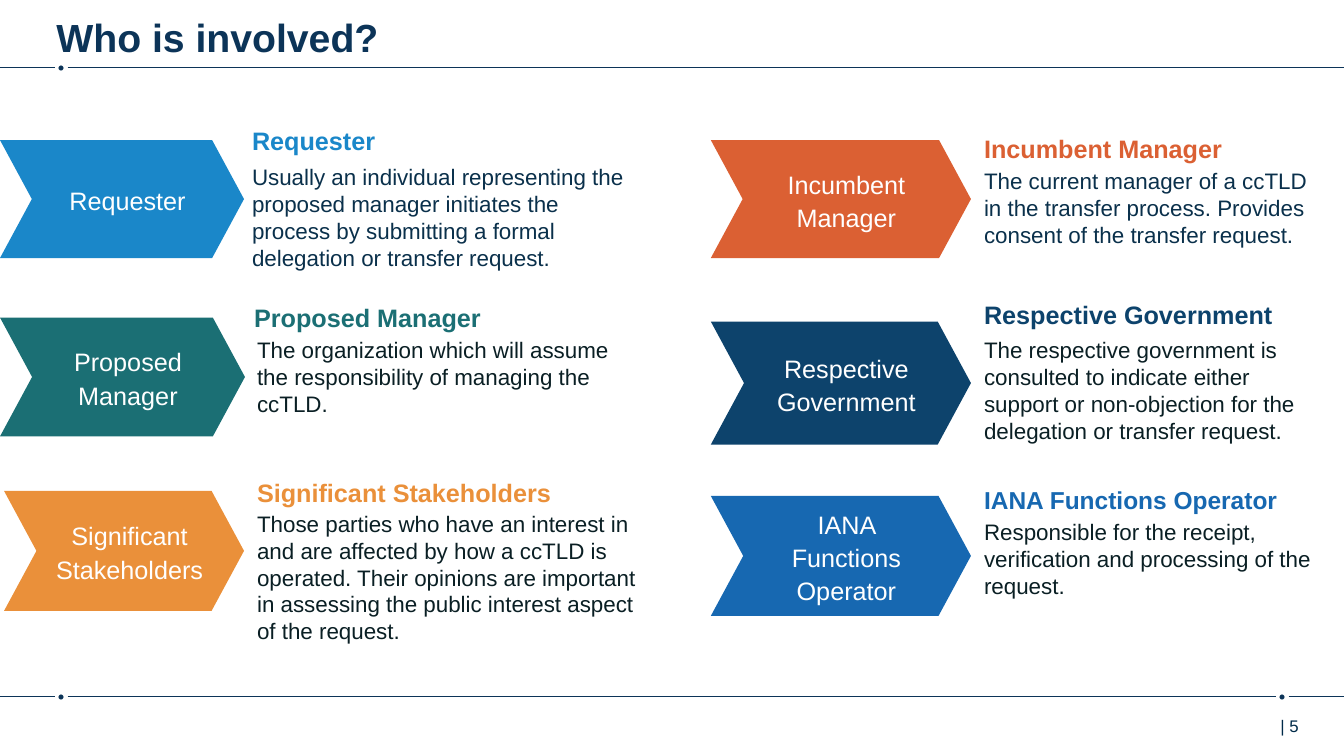
from dataclasses import dataclass

from lxml.etree import SubElement
from pptx import Presentation
from pptx.dml.color import RGBColor
from pptx.enum.shapes import MSO_CONNECTOR, MSO_SHAPE
from pptx.enum.text import MSO_ANCHOR, PP_ALIGN
from pptx.oxml.ns import qn
from pptx.util import Pt

SCALE = 9144  # EMU per px, 100 px to the inch
WIDTH, HEIGHT = 1333, 750


@dataclass(frozen=True)
class Theme:
    font: str = "Arial"
    navy: str = "0C3458"
    white: str = "FFFFFF"
    page_ink: str = "002B49"
    soft_ink: str = "0A304B"
    dark_ink: str = "0A1F24"
    blue: str = "1A87C9"
    teal: str = "1B6F74"
    amber: str = "EA903A"
    orange: str = "DB6033"
    deep_blue: str = "0D436C"
    royal: str = "1768B1"
    title_size: float = 28
    label_size: float = 18
    tight_size: float = 17.5
    body_size: float = 16
    page_size: float = 12
    label_leading: float = 23.8


T = Theme()


@dataclass(frozen=True)
class Role:
    """One party: boxes are (left, top, width, height) in px."""
    name: str
    description: str
    color: str
    ink: str
    chevron: tuple
    heading: tuple
    body: tuple
    heading_size: float = T.label_size


ROLES = [
    Role("Requester",
         "Usually an individual representing the proposed manager initiates the "
         "process by submitting a formal delegation or transfer request.",
         T.blue, T.soft_ink,
         (0, 139, 242, 117), (247, 123, 330, 37), (247, 157, 393, 118)),
    Role("Proposed Manager",
         "The organization which will assume the responsibility of managing the ccTLD.",
         T.teal, T.dark_ink,
         (0, 315, 243, 118), (249, 298, 278, 37), (252, 329, 387, 91)),
    Role("Significant Stakeholders",
         "Those parties who have an interest in and are affected by how a ccTLD is "
         "operated. Their opinions are important in assessing the public interest "
         "aspect of the request.",
         T.amber, T.dark_ink,
         (4, 487, 238, 119), (252, 472, 367, 37), (252, 501, 387, 145)),
    Role("Incumbent Manager",
         "The current manager of a ccTLD in the transfer process. Provides consent "
         "of the transfer request.",
         T.orange, T.soft_ink,
         (705, 139, 258, 117), (973, 131, 249, 37), (973, 161, 342, 91)),
    Role("Respective Government",
         "The respective government is consulted to indicate either support or "
         "non-objection for the delegation or transfer request.",
         T.deep_blue, T.dark_ink,
         (705, 319, 258, 122), (973, 295, 299, 37), (973, 329, 342, 118)),
    Role("IANA Functions Operator",
         "Responsible for the receipt, verification and processing of the request.",
         T.royal, T.dark_ink,
         (705, 492, 258, 119), (973, 479, 299, 37), (973, 509, 342, 91),
         T.tight_size),
]


def px(*lengths):
    return [n * SCALE for n in lengths]


def write(sp, text, size, color, bold=False, margins=(3, 5, 3, 5),
          anchor=MSO_ANCHOR.TOP):
    """Fill a shape with one paragraph and return that paragraph."""
    tf = sp.text_frame
    tf.word_wrap = True
    tf.vertical_anchor = anchor
    tf.margin_left, tf.margin_top, tf.margin_right, tf.margin_bottom = px(*margins)
    tf.text = text
    p = tf.paragraphs[0]
    font = p.runs[0].font
    font.name, font.size, font.bold = T.font, Pt(size), bold
    font.color.rgb = RGBColor.from_string(color)
    return p


def add_text(slide, box, *args, **kwargs):
    return write(slide.shapes.add_textbox(*px(*box)), *args, **kwargs)


def add_solid(slide, kind, box, color):
    sp = slide.shapes.add_shape(kind, *px(*box))
    sp.shadow.inherit = False
    sp.fill.solid()
    sp.fill.fore_color.rgb = RGBColor.from_string(color)
    sp.line.fill.background()
    return sp


def add_line(slide, x1, x2, y):
    line = slide.shapes.add_connector(MSO_CONNECTOR.STRAIGHT, *px(x1, y, x2, y))
    line.line.color.rgb = RGBColor.from_string(T.navy)
    line.line.width = Pt(1)
    SubElement(line._element.spPr, qn("a:effectLst"))


def add_rule(slide, y, dot_lefts):
    """Draw a full-width line broken by a small dot at each given left edge."""
    start = 0
    for left in dot_lefts:
        add_line(slide, start, left - 3, y)
        add_solid(slide, MSO_SHAPE.OVAL, (left, y - 2, 5, 5), T.navy)
        start = left + 9
    add_line(slide, start, WIDTH, y)


def add_chevron(slide, role):
    sp = add_solid(slide, MSO_SHAPE.CHEVRON, role.chevron, role.color)
    sp.adjustments[0] = 0.27
    p = write(sp, role.name, T.label_size, T.white, margins=(7, 4, 7, 4),
              anchor=MSO_ANCHOR.MIDDLE)
    p.alignment = PP_ALIGN.CENTER
    p.line_spacing = Pt(T.label_leading)
    pPr = p._p.get_or_add_pPr()
    pPr.set("marL", str(11 * SCALE))
    pPr.set("indent", "0")


def add_role(slide, role):
    add_chevron(slide, role)
    heading = add_text(slide, role.heading, role.name, role.heading_size,
                       role.color, bold=True, anchor=MSO_ANCHOR.MIDDLE)
    heading.line_spacing = 0.9
    add_text(slide, role.body, role.description, T.body_size, role.ink)


def add_title(slide, text):
    title = slide.shapes.title
    title.left, title.top, title.width, title.height = px(46, 5, 1186, 49)
    p = write(title, text, T.title_size, T.navy, bold=True, margins=(10, 8, 10, 0))
    p.alignment = PP_ALIGN.LEFT


def main():
    prs = Presentation()
    prs.slide_width, prs.slide_height = px(WIDTH, HEIGHT)
    slide = prs.slides.add_slide(prs.slide_layouts[5])
    add_title(slide, "Who is involved?")
    add_rule(slide, 67, [58])
    add_rule(slide, 691, [58, 1269])
    add_text(slide, (1256, 705, 77, 40), "| 5", T.page_size, T.page_ink,
             margins=(14, 5, 0, 5))
    for role in ROLES:
        add_role(slide, role)
    prs.save("out.pptx")


if __name__ == "__main__":
    main()
